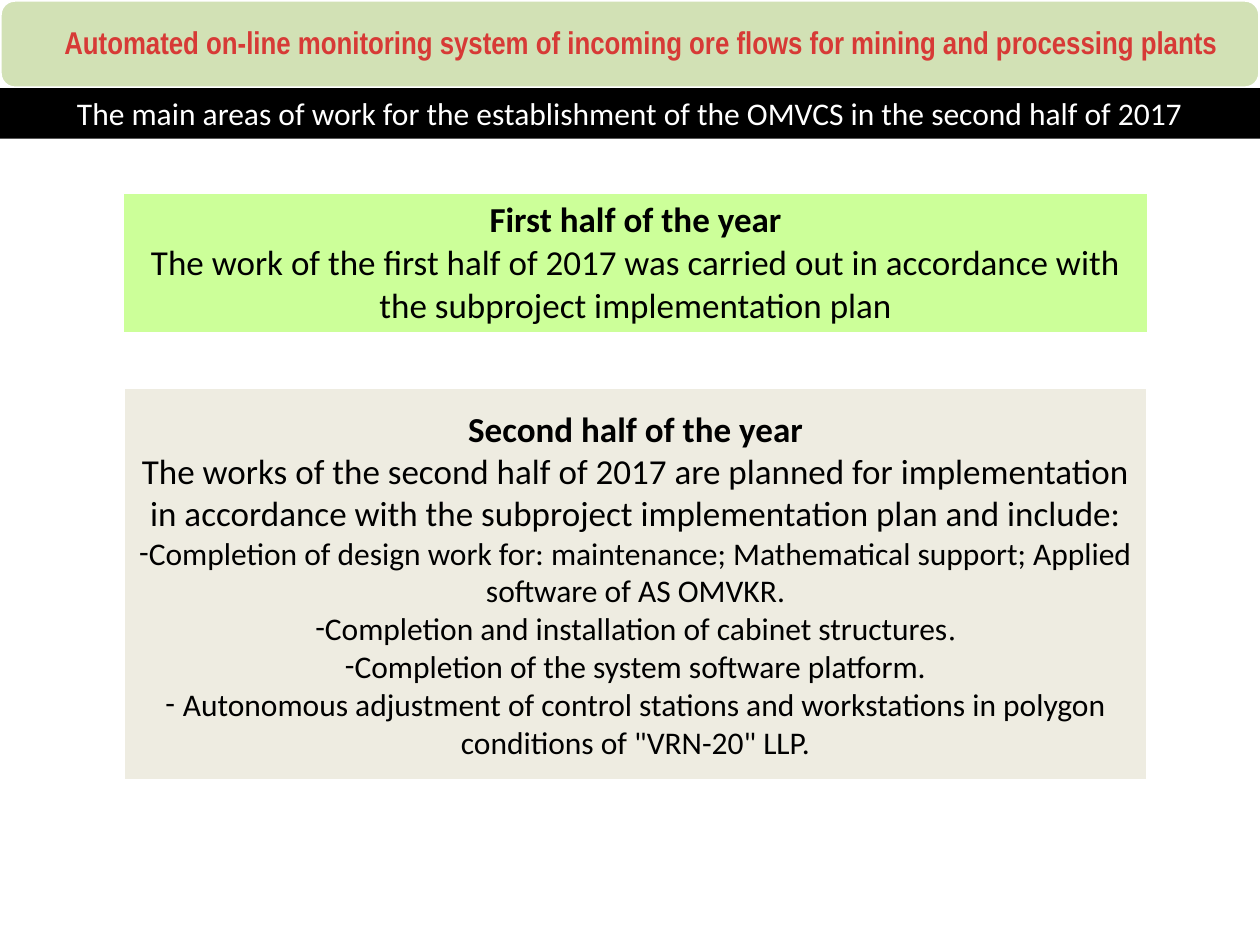
"""Build the slide on the work planned for the second half of 2017."""
import pptx
import pptx.util
import pptx.dml.color
import pptx.enum.shapes
import pptx.enum.text
import pptx.oxml.ns
import lxml.etree

Pt = pptx.util.Pt
KIND = pptx.enum.shapes.MSO_SHAPE
MIDDLE = pptx.enum.text.MSO_ANCHOR.MIDDLE
CENTER = pptx.enum.text.PP_ALIGN.CENTER
HUE = {"white": "FFFFFF", "black": "000000", "red": "D73A36",
       "sage": "D2E1B5", "lime": "CCFF99", "sand": "EEECE1"}
SANS, SERIF, SLIM = "Calibri", "Times New Roman", "Arial Narrow"
WIDE, TALL = 720, 540
HEAD, BAR = 50.4, 28.8
LEFT, SPAN = 70.56, 585.36

TITLE = "Automated on-line monitoring system of incoming ore flows for mining and processing plants"
TOPIC = "The main areas of work for the establishment of the OMVCS in the second half of 2017"
FIRST = ("First half of the year",
         "The work of the first half of 2017 was carried out in accordance with the subproject implementation plan")
NEXT = ("Second half of the year",
        "The works of the second half of 2017 are planned for implementation in accordance with "
        "the subproject implementation plan and include:")
TASKS = [
    [("Completion of design work for: maintenance; Mathematical support; Applied software of AS OMVKR.", SANS)],
    [("Completion and installation of cabinet structures", SANS), (".", SERIF)],
    [("Completion of the system software platform.", SANS)],
    [(" ", SERIF), ("Autonomous adjustment of control stations and workstations in polygon "
                    'conditions of "VRN-20" LLP.', SANS)],
]


def tint(name):
    return pptx.dml.color.RGBColor.from_string(HUE[name])


def paint(item, name):
    item.fill.solid()
    item.fill.fore_color.rgb = tint(name)


def write(para, text, size, hue="black", font=SANS, bold=False):
    para.alignment = CENTER
    run = para.add_run()
    run.text = text
    run.font.size, run.font.name, run.font.bold = Pt(size), font, bold
    run.font.color.rgb = tint(hue)


def lead(para, pair):
    write(para, pair[0], 20, bold=True)
    para.add_line_break()
    write(para, pair[1], 20)


def dash(para):
    props = para._p.get_or_add_pPr()
    props.set("marL", "0")
    props.set("indent", "0")
    lxml.etree.SubElement(props, pptx.oxml.ns.qn("a:buFont"), typeface=SANS)
    lxml.etree.SubElement(props, pptx.oxml.ns.qn("a:buChar"), char="-")


def panel(slide, kind, place, fill, line=None):
    shape = slide.shapes.add_shape(kind, *map(Pt, place))
    shape.shadow.inherit = False
    paint(shape, fill)
    if line:
        shape.line.color.rgb = tint(line)
        shape.line.width = Pt(2)
    else:
        shape.line.fill.background()
    shape.text_frame.word_wrap = True
    shape.text_frame.vertical_anchor = MIDDLE
    return shape


def edge(cell, sides):
    props = cell._tc.get_or_add_tcPr()
    for spot, (side, width) in enumerate(sides):
        line = lxml.etree.Element(pptx.oxml.ns.qn("a:ln" + side), w=str(Pt(width)))
        fill = lxml.etree.SubElement(line, pptx.oxml.ns.qn("a:solidFill"))
        lxml.etree.SubElement(fill, pptx.oxml.ns.qn("a:srgbClr"), val=HUE["white"])
        props.insert(spot, line)


def main():
    deck = pptx.Presentation()
    deck.slide_width, deck.slide_height = Pt(WIDE), Pt(TALL)
    slide = deck.slides.add_slide(deck.slide_layouts[6])

    head = panel(slide, KIND.ROUNDED_RECTANGLE, (0, 0, WIDE, HEAD), "sage", "white")
    head.adjustments[0] = 0.17
    head.text_frame.margin_left = Pt(20)
    para = head.text_frame.paragraphs[0]
    para.line_spacing = 0.9
    write(para, TITLE, 18, "red", SLIM, True)

    bar = panel(slide, KIND.RECTANGLE, (0, HEAD, WIDE, BAR), "black")
    write(bar.text_frame.paragraphs[0], TOPIC, 18, "white")

    table = slide.shapes.add_table(1, 1, *map(Pt, (LEFT, 110.16, SPAN, 77))).table
    cell = table.cell(0, 0)
    paint(cell, "lime")
    edge(cell, [("L", 1), ("R", 1), ("T", 1), ("B", 3)])
    lead(cell.text_frame.paragraphs[0], FIRST)

    plan = panel(slide, KIND.RECTANGLE, (LEFT, 221.04, SPAN, 225.36), "sand", "white")
    lead(plan.text_frame.paragraphs[0], NEXT)
    for task in TASKS:
        para = plan.text_frame.add_paragraph()
        for text, font in task:
            write(para, text, 18, font=font)
        dash(para)

    deck.save("out.pptx")


if __name__ == "__main__":
    main()
